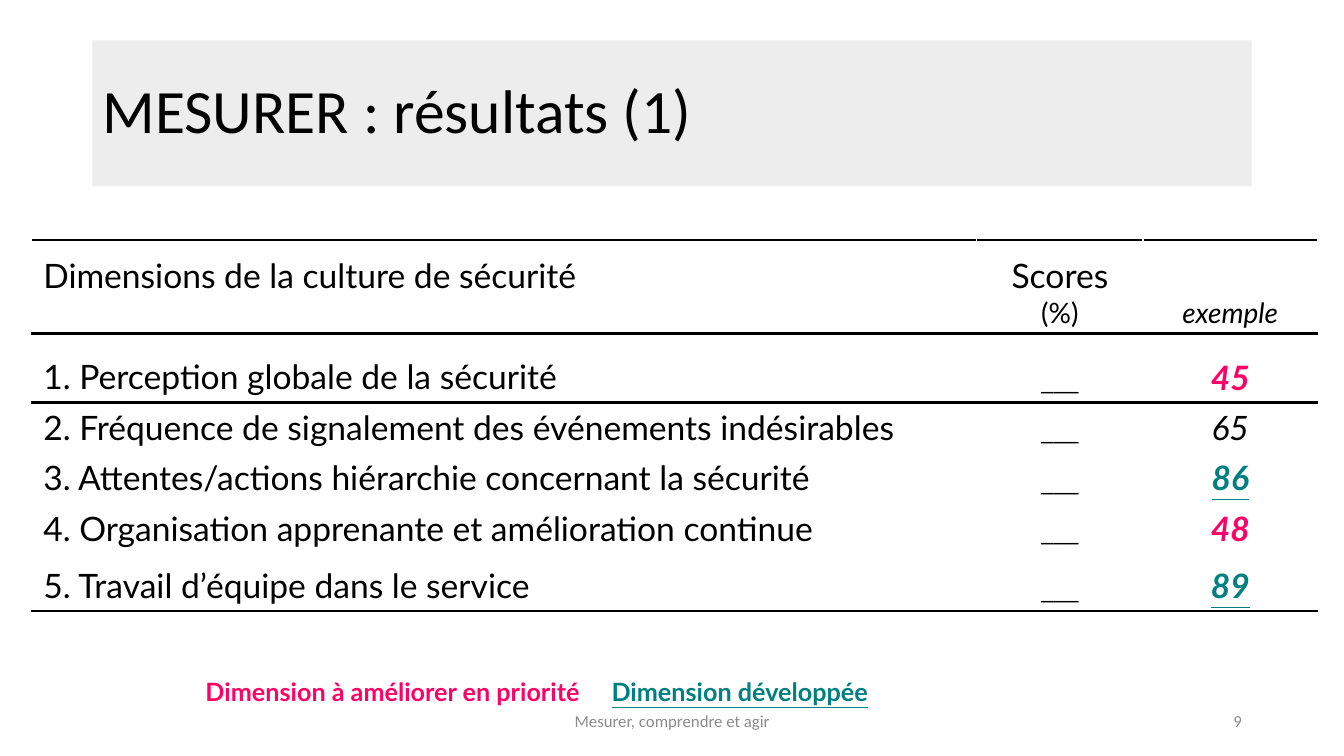
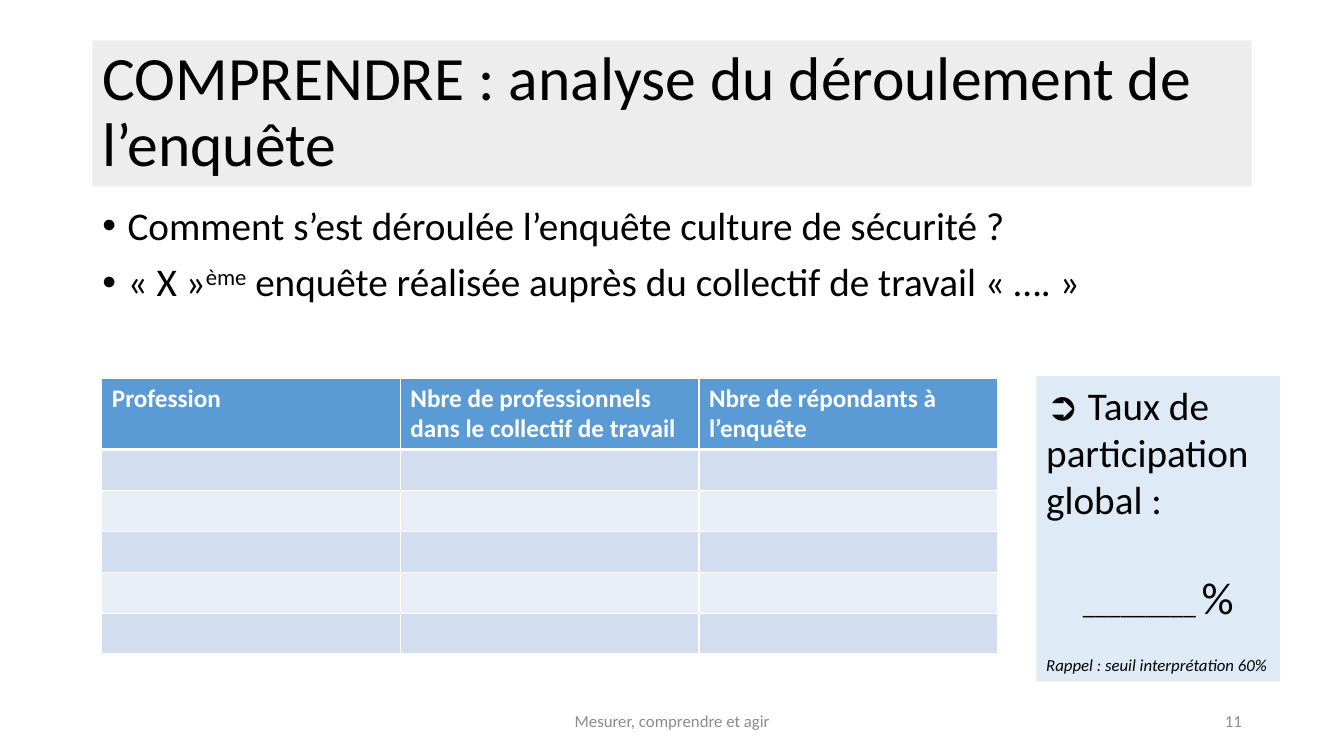
from lxml.etree import SubElement
from pptx import Presentation
from pptx.dml.color import RGBColor
from pptx.enum.shapes import MSO_SHAPE
from pptx.enum.text import MSO_ANCHOR, MSO_AUTO_SIZE, PP_ALIGN
from pptx.oxml import parse_xml
from pptx.oxml.ns import nsdecls, qn
from pptx.util import Pt

COLORS = {
    "ink": "000000", "white": "FFFFFF", "band": "EDEDED", "footer": "8C8C8C",
    "priority": "FF0066", "developed": "008080", "header": "5B9BD5",
    "row_dark": "D2DEEF", "row_light": "EAEFF7", "panel": "DEEBF7",
}
TITLE_BOX = (66, 28.8, 828, 104.4)
FOOTER_BOX = (318.24, 500.4, 324, 28.8)
NUMBER_BOX = (678.24, 500.4, 216, 28.8)
FOOTER = "Mesurer, comprendre et agir"

PLAIN = {"name": "Calibri", "size": Pt(18), "bold": False, "italic": False, "underline": False}
LATO = {"name": "Lato", "size": Pt(24)}
PRIORITY = {**LATO, "bold": True, "color": "priority"}
DEVELOPED = {**LATO, "bold": True, "underline": True, "color": "developed"}
SMALL_GREY = {"size": Pt(12), "color": "footer"}
CENTER = {"alignment": PP_ALIGN.CENTER}
TIGHT = {**CENTER, "line_spacing": 0.8}


def rgb(name):
    return RGBColor.from_string(COLORS[name])


def apply(target, values):
    for name, value in values.items():
        setattr(target, name, value)


def place(shape, box):
    apply(shape, dict(zip(("left", "top", "width", "height"), map(Pt, box))))


def paint(target, color):
    target.fill.solid()
    target.fill.fore_color.rgb = rgb(color)


def write(frame, *paras):
    """Each paragraph is (paragraph format, (text, font format), ...)."""
    for index, (layout, *spans) in enumerate(paras):
        para = frame.add_paragraph() if index else frame.paragraphs[0]
        apply(para, layout)
        for text, font in spans:
            span = para.add_run()
            span.text = text
            look = {**PLAIN, "color": "ink", **font}
            span.font.color.rgb = rgb(look.pop("color"))
            apply(span.font, look)


def set_frame(frame, anchor=MSO_ANCHOR.TOP):
    apply(frame, {"word_wrap": True, "auto_size": MSO_AUTO_SIZE.NONE, "vertical_anchor": anchor})
    return frame


def add_text(page, box, *paras, anchor=MSO_ANCHOR.TOP):
    shape = page.shapes.add_textbox(*map(Pt, box))
    write(set_frame(shape.text_frame, anchor), *paras)
    return shape


def add_grid(page, left, top, widths, heights):
    table = page.shapes.add_table(len(heights), len(widths), Pt(left), Pt(top),
                                  Pt(sum(widths)), Pt(sum(heights))).table
    table.first_row = table.horz_banding = False
    for column, width in zip(table.columns, widths):
        column.width = Pt(width)
    for row, height in zip(table.rows, heights):
        row.height = Pt(height)
    return table


def set_borders(cell, color, **widths):
    """Draw the sides named L, R, T and B, given in that order."""
    props = cell._tc.get_or_add_tcPr()
    for index, (side, width) in enumerate(widths.items()):
        props.insert(index, parse_xml(
            f'<a:ln{side} {nsdecls("a")} w="{Pt(width)}"><a:solidFill>'
            f'<a:srgbClr val="{COLORS[color]}"/></a:solidFill></a:ln{side}>'))


# Title band, footer and page number
def add_page(deck, layout, title, number):
    page = deck.slides.add_slide(deck.slide_layouts[layout])
    band = page.shapes.title
    place(band, TITLE_BOX)
    paint(band, "band")
    write(set_frame(band.text_frame, MSO_ANCHOR.MIDDLE),
          ({"alignment": PP_ALIGN.LEFT, "line_spacing": 0.9}, (title, {"size": Pt(44)})))
    for box, text, align in ((FOOTER_BOX, FOOTER, PP_ALIGN.CENTER),
                             (NUMBER_BOX, number, PP_ALIGN.RIGHT)):
        add_text(page, box, ({"alignment": align}, (text, SMALL_GREY)), anchor=MSO_ANCHOR.MIDDLE)
    return page


# Scores by dimension
def add_scores(page, left, top):
    dimensions = (
        ("1. Perception globale de la sécurité", "45", PRIORITY),
        ("2. Fréquence de signalement des événements indésirables", "65", LATO),
        ("3. Attentes/actions hiérarchie concernant la sécurité", "86", DEVELOPED),
        ("4. Organisation apprenante et amélioration continue", "48", PRIORITY),
        ("5. Travail d’équipe dans le service", "89", DEVELOPED),
    )
    unit = {**LATO, "size": Pt(20)}
    rows = [(
        [({}, ("Dimensions de la culture de sécurité", LATO))],
        [(TIGHT, ("Scores", LATO)), ({**TIGHT, "space_before": Pt(4.8)}, ("(%)", unit))],
        [(TIGHT, ("exemple", {**unit, "italic": True}))],
    )]
    for index, (label, score, look) in enumerate(dimensions):
        rows.append((
            [({} if index else {"line_spacing": 1.4}, (label, LATO))],
            [(CENTER, ("___", {}))],
            [(CENTER if index else TIGHT, (score, {**look, "italic": True}))],
        ))
    table = add_grid(page, left, top, (675.4, 118.8, 124.6), (67, 49, 36, 36, 36, 41))
    ruled = {0: {"T": 2.25, "B": 2.25}, 1: {"T": 2.25}, len(rows) - 1: {"B": 2.25}}
    for row_index, row in enumerate(rows):
        for column_index, paras in enumerate(row):
            cell = table.cell(row_index, column_index)
            apply(cell, {"vertical_anchor": MSO_ANCHOR.BOTTOM,
                         "margin_left": Pt(8.64), "margin_right": Pt(8.64)})
            cell.fill.background()
            set_borders(cell, "ink", **ruled.get(row_index, {}))
            write(cell.text_frame, *paras)
    # The first heading sits level with the word "Scores"
    table.cell(0, 0).margin_bottom = Pt(27)


# Key to the score colours
def add_legend(page, box, second_start):
    legend = add_text(page, box, (
        {}, ("Dimension à améliorer en priorité\t", {**PRIORITY, "size": Pt(18)}),
        ("Dimension développée", {**DEVELOPED, "size": Pt(18)})))
    props = legend.text_frame.paragraphs[0]._p.get_or_add_pPr()
    stops = SubElement(props, qn("a:tabLst"))
    SubElement(stops, qn("a:tab"), pos=str(Pt(second_start)), algn="l")


# Bulleted questions
def add_questions(page, box):
    body = page.placeholders[1]
    place(body, box)
    frame = set_frame(body.text_frame)
    layout = {"line_spacing": 0.9, "space_before": Pt(10)}
    large = {"size": Pt(28)}
    write(frame,
          (layout, ("Comment s’est déroulée l’enquête culture de sécurité ?", large)),
          (layout, ("« X »", large), ("ème", large),
           (" enquête réalisée auprès du collectif de travail « …. »", large)))
    for para in frame.paragraphs:
        props = para._p.get_or_add_pPr()
        props.set("marL", str(Pt(18)))
        props.set("indent", str(-Pt(18)))
        SubElement(props, qn("a:buChar"), char="•")
    ordinal = frame.paragraphs[1].runs[1]
    ordinal._r.get_or_add_rPr().set("baseline", "30000")


# Respondents by profession
def add_professions(page, left, top):
    headings = ("Profession", "Nbre de professionnels dans le collectif de travail",
                "Nbre de répondants à l’enquête")
    table = add_grid(page, left, top, [213.3] * 3, [50.6] + [29.2] * 5)
    for row_index, row in enumerate(table.rows):
        for heading, cell in zip(headings, row.cells):
            if row_index:
                paint(cell, "row_dark" if row_index % 2 else "row_light")
            else:
                paint(cell, "header")
                write(cell.text_frame, ({}, (heading, {"bold": True, "color": "white"})))
            set_borders(cell, "white", L=1, R=1, T=1 if row_index != 1 else 3,
                        B=1 if row_index else 3)


# Participation rate panel
def add_rate(page, box):
    panel = page.shapes.add_shape(MSO_SHAPE.RECTANGLE, *map(Pt, box))
    panel.shadow.inherit = False
    paint(panel, "panel")
    panel.line.fill.background()
    left = {"alignment": PP_ALIGN.LEFT}
    write(set_frame(panel.text_frame),
          (left, ("➲ Taux de participation global :", {"size": Pt(28)})),
          ({**CENTER, "space_before": Pt(34)}, ("_________ ", {}), ("%", {"size": Pt(32)})),
          ({**left, "space_before": Pt(22)},
           ("Rappel : seuil interprétation 60%", {"size": Pt(12), "italic": True})))


def main():
    deck = Presentation()
    apply(deck, {"slide_width": Pt(960), "slide_height": Pt(540)})

    results = add_page(deck, 5, "MESURER : résultats (1)", "9")
    add_scores(results, 22.32, 171.36)
    add_legend(results, (139.7, 479.5, 555.8, 28.8), 290)

    survey = add_page(deck, 1, "COMPRENDRE : analyse du déroulement de l’enquête", "11")
    add_questions(survey, (66, 144, 828, 342.7))
    add_professions(survey, 72.7, 270)
    add_rate(survey, (740.2, 268.6, 174.2, 218.2))

    deck.save("out.pptx")


if __name__ == "__main__":
    main()
